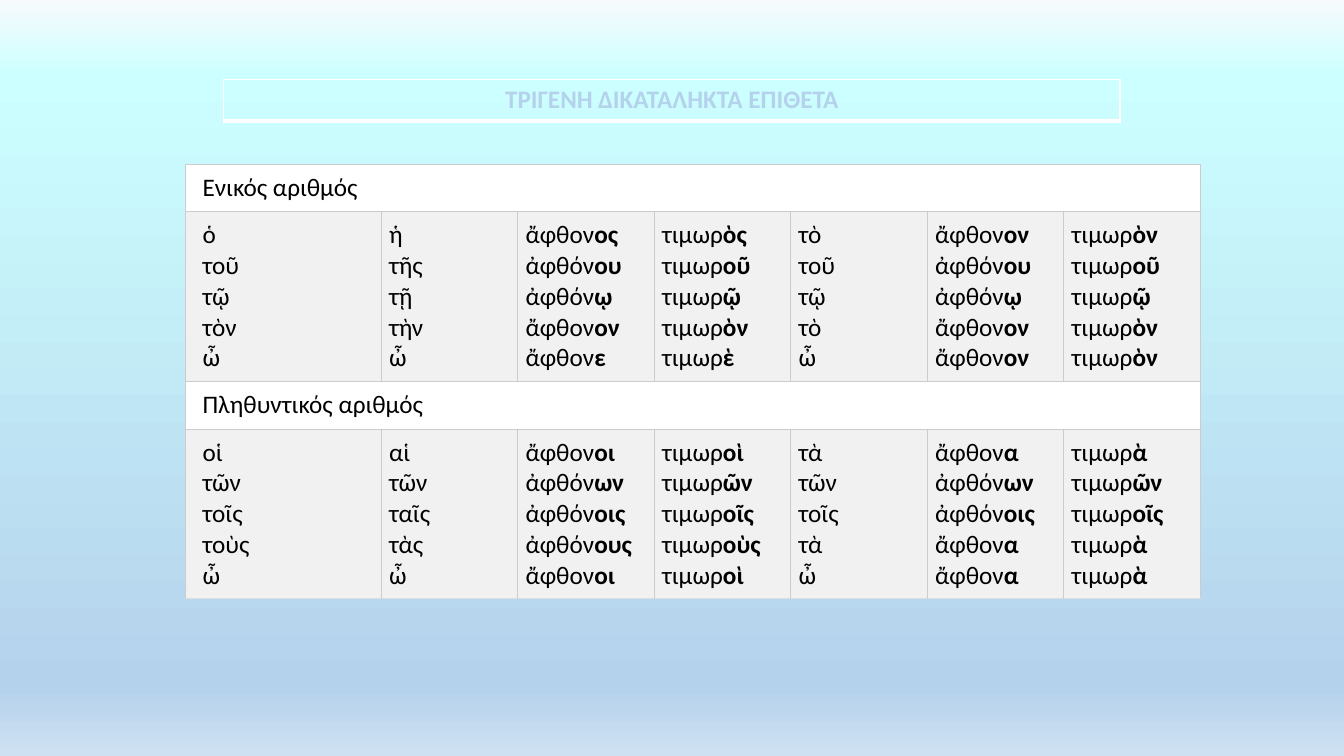
from lxml.etree import SubElement
from pptx import Presentation
from pptx.dml.color import RGBColor
from pptx.enum.text import PP_ALIGN
from pptx.oxml.ns import qn
from pptx.util import Inches, Pt

WHITE = RGBColor(0xFF, 0xFF, 0xFF)
BLACK = RGBColor(0x00, 0x00, 0x00)
BAND = RGBColor(0xF1, 0xF1, 0xF1)
RULE = RGBColor(0xCC, 0xCC, 0xCC)
BOTTOM_RULE = RGBColor(0xDD, 0xDD, 0xDD)
SKY = RGBColor(0xB5, 0xD2, 0xEC)
MIST = RGBColor(0xF7, 0xFA, 0xFD)
AQUA = RGBColor(0xCC, 0xFF, 0xFF)
HAZE = RGBColor(0xCE, 0xE1, 0xF2)

BACKDROP = [(0, MIST), (10, AQUA), (91, SKY), (100, HAZE)]
SIDES = ("L", "R", "T", "B")
COLUMNS = [14.55] + [10.16] * 6
ROWS = [6.27, 22.27] * 2

DECLENSIONS = [
    ("Ενικός αριθμός", [
        "ὁ τοῦ τῷ τὸν ὦ",
        "ἡ τῆς τῇ τὴν ὦ",
        "ἄφθον|ος ἀφθόν|ου ἀφθόν|ῳ ἄφθον|ον ἄφθον|ε",
        "τιμωρ|ὸς τιμωρ|οῦ τιμωρ|ῷ τιμωρ|ὸν τιμωρ|ὲ",
        "τὸ τοῦ τῷ τὸ ὦ",
        "ἄφθον|ον ἀφθόν|ου ἀφθόν|ῳ ἄφθον|ον ἄφθον|ον",
        "τιμωρ|ὸν τιμωρ|οῦ τιμωρ|ῷ τιμωρ|ὸν τιμωρ|ὸν",
    ]),
    ("Πληθυντικός αριθμός", [
        "οἱ τῶν τοῖς τοὺς ὦ",
        "αἱ τῶν ταῖς τὰς ὦ",
        "ἄφθον|οι ἀφθόν|ων ἀφθόν|οις ἀφθόν|ους ἄφθον|οι",
        "τιμωρ|οὶ τιμωρ|ῶν τιμωρ|οῖς τιμωρ|οὺς τιμωρ|οὶ",
        "τὰ τῶν τοῖς τὰ ὦ",
        "ἄφθον|α ἀφθόν|ων ἀφθόν|οις ἄφθον|α ἄφθον|α",
        "τιμωρ|ὰ τιμωρ|ῶν τιμωρ|οῖς τιμωρ|ὰ τιμωρ|ὰ",
    ]),
]


class GrammarSlide:
    """Draws on one slide, with lengths in percent of the slide's size."""

    font_name = "Calibri"
    font_size = Pt(18)

    def __init__(self, deck):
        self.deck = deck
        self.slide = deck.slides.add_slide(deck.slide_layouts[6])

    def across(self, percent):
        return round(self.deck.slide_width * percent / 100)

    def down(self, percent):
        return round(self.deck.slide_height * percent / 100)

    def backdrop(self, stops):
        fill = self.slide.background.fill
        fill.gradient()
        fill.gradient_angle = 270
        stop_list = self.slide.element.find(".//" + qn("a:gsLst"))
        for old_stop in list(stop_list):
            stop_list.remove(old_stop)
        for position, color in stops:
            stop = SubElement(stop_list, qn("a:gs"), pos=str(position * 1000))
            SubElement(stop, qn("a:srgbClr"), val=str(color))

    def table(self, left, top, columns, rows):
        grid = self.slide.shapes.add_table(
            len(rows), len(columns), self.across(left), self.down(top),
            self.across(sum(columns)), self.down(sum(rows))).table
        grid.first_row = grid.horz_banding = False
        for column, width in zip(grid.columns, columns):
            column.width = self.across(width)
        for row, height in zip(grid.rows, rows):
            row.height = self.down(height)
        return grid

    def borders(self, cell, color, widths, bottom_color=None):
        properties = cell._tc.get_or_add_tcPr()
        for side, width in zip(SIDES, widths):
            line = SubElement(properties, qn("a:ln" + side), w=str(Pt(width)))
            solid = SubElement(line, qn("a:solidFill"))
            shade = bottom_color if side == "B" and bottom_color else color
            SubElement(solid, qn("a:srgbClr"), val=str(shade))

    def style(self, paragraph, color, bold=None):
        paragraph.font.name = self.font_name
        paragraph.font.size = self.font_size
        paragraph.font.color.rgb = color
        paragraph.font.bold = bold

    def forms(self, cell, lines):
        paragraph = cell.text_frame.paragraphs[0]
        self.style(paragraph, BLACK)
        for index, line in enumerate(lines):
            if index:
                paragraph.add_line_break()
            stem, _, ending = line.partition("|")
            paragraph.add_run().text = stem
            if ending:
                bold_ending = paragraph.add_run()
                bold_ending.text = ending
                bold_ending.font.bold = True

    def title(self, text, left, top, width, height):
        cell = self.table(left, top, [width], [height]).cell(0, 0)
        self.borders(cell, WHITE, (1, 1, 1, 3))
        cell.fill.background()
        heading = cell.text_frame.paragraphs[0]
        heading.alignment = PP_ALIGN.CENTER
        self.style(heading, SKY, bold=True)
        run = heading.add_run()
        run.text = text
        run.font.bold = True
        run.font.color.rgb = SKY

    def declensions(self, numbers, left, top):
        grid = self.table(left, top, COLUMNS, ROWS)
        last_row = len(ROWS) - 1
        for row in range(len(ROWS)):
            for column in range(len(COLUMNS)):
                cell = grid.cell(row, column)
                self.borders(cell, RULE, [0.75] * 4,
                             BOTTOM_RULE if row == last_row else None)
                cell.fill.solid()
                cell.fill.fore_color.rgb = BAND if row % 2 else WHITE
                cell.margin_left = Inches(0.08 if column else 0.17)
                cell.margin_right = Inches(0.08)
                cell.margin_top = cell.margin_bottom = Inches(0.08)
        for index, (number, cases) in enumerate(numbers):
            heading = grid.cell(2 * index, 0)
            heading.merge(grid.cell(2 * index, len(COLUMNS) - 1))
            self.forms(heading, [number])
            for column, case_forms in enumerate(cases):
                self.forms(grid.cell(2 * index + 1, column), case_forms.split())


def main():
    deck = Presentation()
    deck.slide_width, deck.slide_height = Inches(13.33), Inches(7.5)
    page = GrammarSlide(deck)
    page.backdrop(BACKDROP)
    page.declensions(DECLENSIONS, 13.8, 21.73)
    page.title("ΤΡΙΓΕΝΗ ΔΙΚΑΤΑΛΗΚΤΑ ΕΠΙΘΕΤΑ", 16.65, 10.53, 66.69, 5.47)
    deck.save("out.pptx")


if __name__ == "__main__":
    main()
